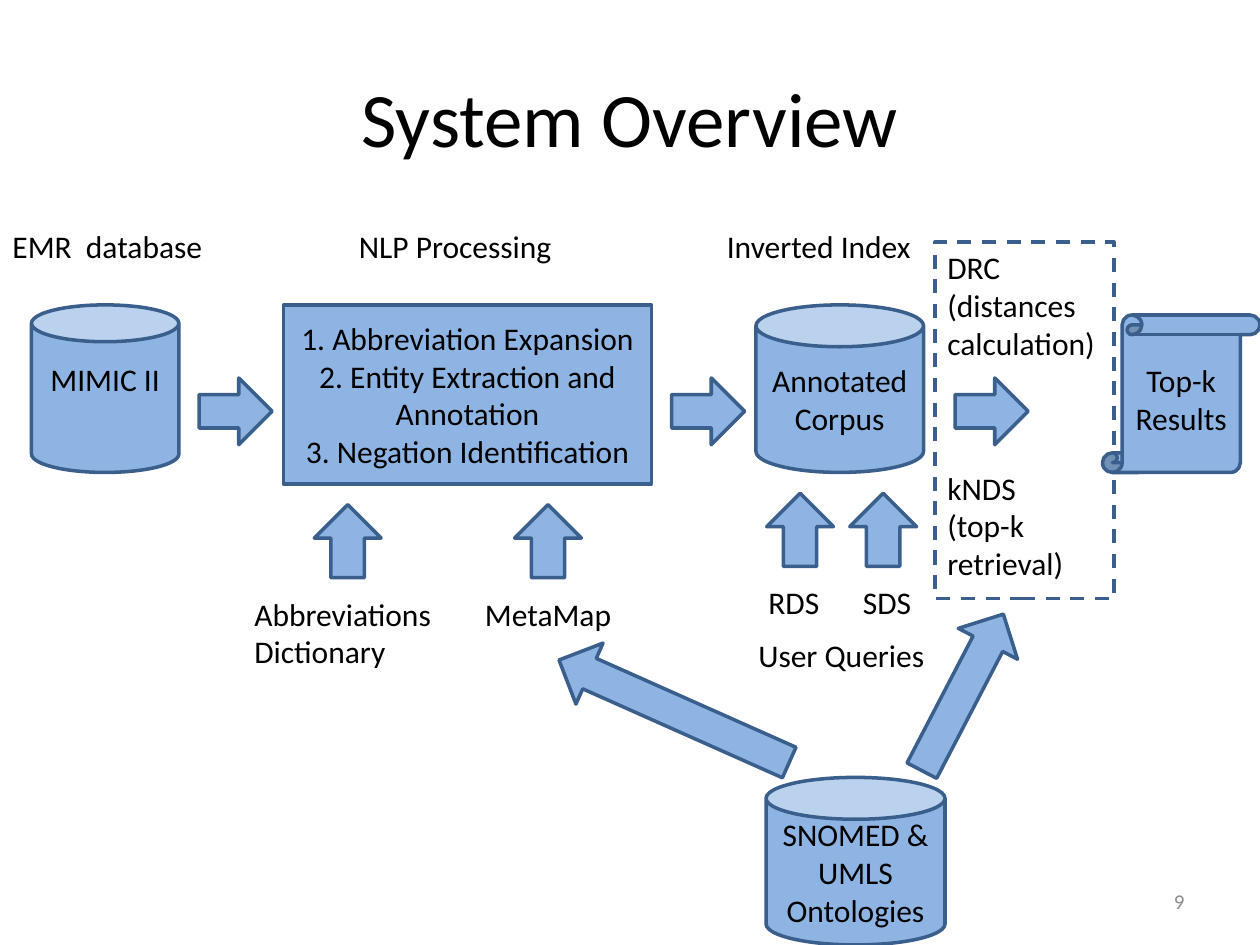
from pptx import Presentation
from pptx.dml.color import RGBColor
from pptx.enum.dml import MSO_LINE
from pptx.enum.shapes import MSO_SHAPE
from pptx.enum.text import MSO_ANCHOR, PP_ALIGN
from pptx.util import Inches, Pt

CAN = MSO_SHAPE.CAN
RECT = MSO_SHAPE.RECTANGLE
ARROW = MSO_SHAPE.RIGHT_ARROW
SCROLL = MSO_SHAPE.VERTICAL_SCROLL
DASH = MSO_LINE.DASH
TOP, MIDDLE = MSO_ANCHOR.TOP, MSO_ANCHOR.MIDDLE
LEFT, CENTER, RIGHT = PP_ALIGN.LEFT, PP_ALIGN.CENTER, PP_ALIGN.RIGHT

FILL, EDGE, BLACK, GRAY = "8EB4E3", "3A5F8C", "000000", "8C8C8C"
ARROW_W, ARROW_H = 0.58, 0.53
HEADING_Y, FLOW_Y = 1.75, 3


def color(value):
    return RGBColor.from_string(value)


def write(sp, text, size=18, fg=BLACK, align=LEFT, anchor=TOP, wrap=True):
    tf = sp.text_frame
    tf.word_wrap = wrap
    tf.vertical_anchor = anchor
    for i, line in enumerate(text.split("\n")):
        p = tf.add_paragraph() if i else tf.paragraphs[0]
        p.alignment = align
        r = p.add_run()
        r.text = line
        r.font.name = "Calibri"
        r.font.size = Pt(size)
        r.font.color.rgb = color(fg)


def label(s, box, text, **fmt):
    sp = s.shapes.add_textbox(*map(Inches, box))
    write(sp, text, **fmt)


def shape(s, kind, box, text="", fill=FILL, rotation=0):
    sp = s.shapes.add_shape(kind, *map(Inches, box))
    sp.shadow.inherit = False
    sp.rotation = rotation
    if fill:
        sp.fill.solid()
        sp.fill.fore_color.rgb = color(fill)
    else:
        sp.fill.background()
    sp.line.color.rgb = color(EDGE)
    sp.line.width = Pt(2)
    if text:
        write(sp, text, align=CENTER, anchor=MIDDLE)
    return sp


def arrow(s, x, y, length=ARROW_W, rotation=0):
    shape(s, ARROW, (x, y, length, ARROW_H), rotation=rotation)


def title(s, box):
    label(s, box, "System Overview", size=44, align=CENTER, anchor=MIDDLE)


def page_number(s, box):
    label(s, box, "9", size=12, fg=GRAY, align=RIGHT, anchor=MIDDLE)


def emr_database(s, box):
    x, y, w, h = box
    label(s, (x - 0.25, HEADING_Y, 1.92, 0.4), "EMR  database")
    can = shape(s, CAN, box, "MIMIC II")
    can.text_frame.margin_bottom = Inches(0.35)
    arrow(s, x + w + 0.16, FLOW_Y)


def nlp_processing(s, box):
    x, y, w, h = box
    label(s, (x + 0.5, HEADING_Y, 1.92, 0.4), "NLP Processing")
    shape(s, RECT, box, "1. Abbreviation Expansion\n"
          "2. Entity Extraction and Annotation\n3. Negation Identification")
    arrow(s, x + w + 0.16, FLOW_Y)
    for dx in (0.22, 1.81):
        arrow(s, x + dx, y + h + 0.19, rotation=270)
    inputs_y = y + h + 0.83
    label(s, (x - 0.33, inputs_y, 1.62, 0.71), "Abbreviations\nDictionary", wrap=False)
    label(s, (x + 1.5, inputs_y, 1.25, 0.4), "MetaMap")


def inverted_index(s, box):
    x, y, w, h = box
    label(s, (x - 0.33, HEADING_Y, 1.92, 0.4), "Inverted Index")
    shape(s, CAN, box, "Annotated Corpus")
    for dx, text_dx, query in ((0.06, 0, "RDS"), (0.72, 0.75, "SDS")):
        arrow(s, x + dx, y + h + 0.19, rotation=270)
        label(s, (x + text_dx, y + h + 0.83, 1, 0.4), query)
    label(s, (x - 0.08, y + h + 1.25, 1.92, 0.4), "User Queries")


def ranking(s, box):
    x, y, w, h = box
    shape(s, RECT, box, fill=None).line.dash_style = DASH
    label(s, (x, y, 1.5, 1.01), "DRC (distances calculation)")
    arrow(s, x + 0.16, FLOW_Y)
    label(s, (x, y + 1.75, w, 1.01), "kNDS\n(top-k retrieval)")


def results(s, box):
    shape(s, SCROLL, box, "Top-k Results")


def ontologies(s, box):
    x, y, w, h = box
    shape(s, CAN, box, "SNOMED & UMLS Ontologies")
    arrow(s, x - 1.73, y - 0.79, length=2, rotation=204)
    arrow(s, x + 0.86, y - 0.94, length=1.4, rotation=297.5)


def main():
    prs = Presentation()
    prs.slide_width, prs.slide_height = Inches(10), Inches(7.5)
    s = prs.slides.add_slide(prs.slide_layouts[6])
    title(s, (0.5, 0.3, 9, 1.25))
    page_number(s, (7.17, 6.95, 2.33, 0.4))
    ranking(s, (7.42, 1.92, 1.42, 2.83))
    emr_database(s, (0.25, 2.42, 1.17, 1.33))
    nlp_processing(s, (2.25, 2.42, 2.92, 1.42))
    inverted_index(s, (6, 2.42, 1.33, 1.33))
    results(s, (8.75, 2.5, 1.25, 1.25))
    ontologies(s, (6.08, 6.17, 1.42, 1.33))
    prs.save("out.pptx")


if __name__ == "__main__":
    main()
